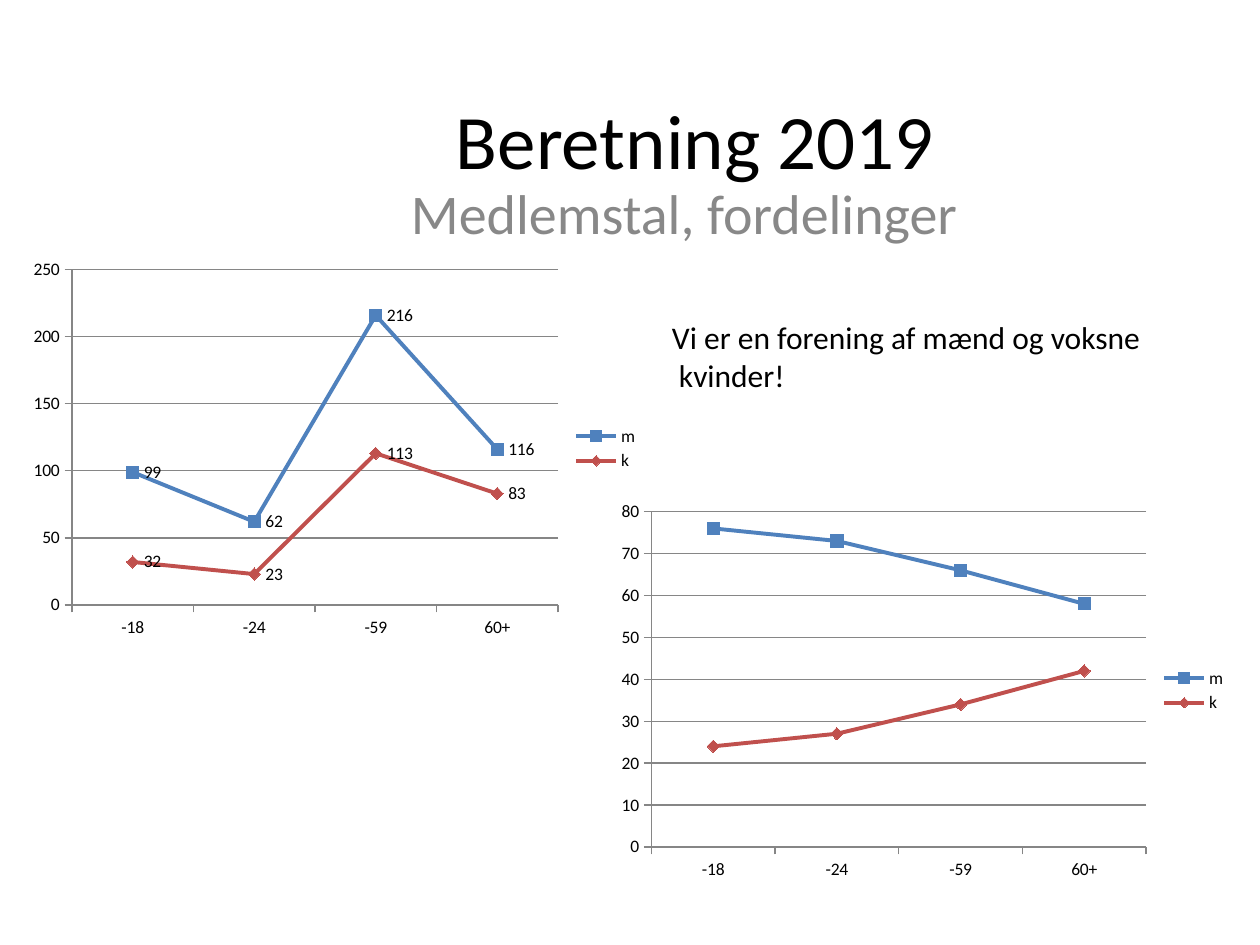
from pptx import Presentation
from pptx.chart.data import CategoryChartData as Data
from pptx.dml.color import RGBColor
from pptx.enum.chart import XL_CHART_TYPE as Kind
from pptx.enum.chart import XL_LABEL_POSITION as Spot
from pptx.enum.chart import XL_LEGEND_POSITION as Side
from pptx.enum.chart import XL_MARKER_STYLE as Mark
from pptx.enum.chart import XL_TICK_MARK as Tick
from pptx.util import Pt

SCALE = 914400 / 126
FONT = "Calibri"
BLACK = RGBColor(0x00, 0x00, 0x00)
GRAY = RGBColor(0x88, 0x88, 0x88)
GRID = RGBColor(0x86, 0x86, 0x86)
BLUE = RGBColor(0x4F, 0x81, 0xBD)
RED = RGBColor(0xC0, 0x50, 0x4D)
AGES = ["-18", "-24", "-59", "60+"]
STYLES = [(BLUE, Mark.SQUARE), (RED, Mark.DIAMOND)]


def px(n):
    return int(n * SCALE)


def add_box(slide, x, y, w, h):
    """Add an empty wrapping text frame without insets."""
    frame = slide.shapes.add_textbox(px(x), px(y), px(w), px(h)).text_frame
    frame.word_wrap = True
    frame.margin_left = frame.margin_right = 0
    frame.margin_top = frame.margin_bottom = 0
    return frame


def write(para, text, size=18, color=BLACK, left=0, first=0, line=None):
    """Fill a paragraph; left and first are its indents in px."""
    run = para.add_run()
    run.text = text
    run.font.name = FONT
    run.font.size = Pt(size)
    run.font.color.rgb = color
    props = para._p.get_or_add_pPr()
    props.set("marL", str(px(left)))
    props.set("indent", str(px(first)))
    if line:
        para.line_spacing = Pt(line)


def style_axis(axis):
    axis.major_tick_mark = Tick.OUTSIDE
    axis.minor_tick_mark = Tick.NONE
    axis.format.line.color.rgb = GRID
    axis.format.line.width = Pt(0.75)


def style_line(line, color, mark, labels):
    line.smooth = False
    line.format.line.color.rgb = color
    line.format.line.width = Pt(2.25)
    line.marker.style = mark
    line.marker.size = 7
    line.marker.format.fill.solid()
    line.marker.format.fill.fore_color.rgb = color
    line.marker.format.line.color.rgb = color
    if labels:
        line.data_labels.show_value = True
        line.data_labels.position = Spot.RIGHT


def add_lines(slide, x, y, men, women, top, step, labels=False):
    data = Data()
    data.categories = AGES
    data.add_series("m", men)
    data.add_series("k", women)
    chart = slide.shapes.add_chart(
        Kind.LINE_MARKERS, px(x), px(y), px(630), px(393), data).chart
    chart.has_title = False
    chart.font.name = FONT
    chart.font.size = Pt(10)
    chart.font.color.rgb = BLACK
    chart.has_legend = True
    chart.legend.position = Side.RIGHT
    chart.legend.include_in_layout = False
    style_axis(chart.category_axis)
    axis = chart.value_axis
    style_axis(axis)
    axis.minimum_scale = 0
    axis.maximum_scale = top
    axis.major_unit = step
    axis.has_major_gridlines = True
    axis.major_gridlines.format.line.color.rgb = GRID
    axis.major_gridlines.format.line.width = Pt(0.75)
    plot = chart.plots[0]
    plot.vary_by_categories = False
    for line, (color, mark) in zip(plot.series, STYLES):
        style_line(line, color, mark, labels)


def main():
    deck = Presentation()
    deck.slide_width, deck.slide_height = px(1260), px(945)
    slide = deck.slides.add_slide(deck.slide_layouts[6])

    head = add_box(slide, 410, 100, 551, 146)
    write(head.paragraphs[0], "Beretning 2019", size=44, left=46, line=48.7)
    write(head.add_paragraph(), "Medlemstal, fordelinger", size=32,
          color=GRAY, left=1, line=34.3)

    note = add_box(slide, 670, 318, 474, 79)
    write(note.paragraphs[0], "Vi er en forening af mænd og voksne kvinder!",
          left=9, first=-7)

    add_lines(slide, 21, 252, [99, 62, 216, 116], [32, 23, 113, 83],
              top=250, step=50, labels=True)
    add_lines(slide, 609, 494, [76, 73, 66, 58], [24, 27, 34, 42],
              top=80, step=10)
    deck.save("out.pptx")


if __name__ == "__main__":
    main()
